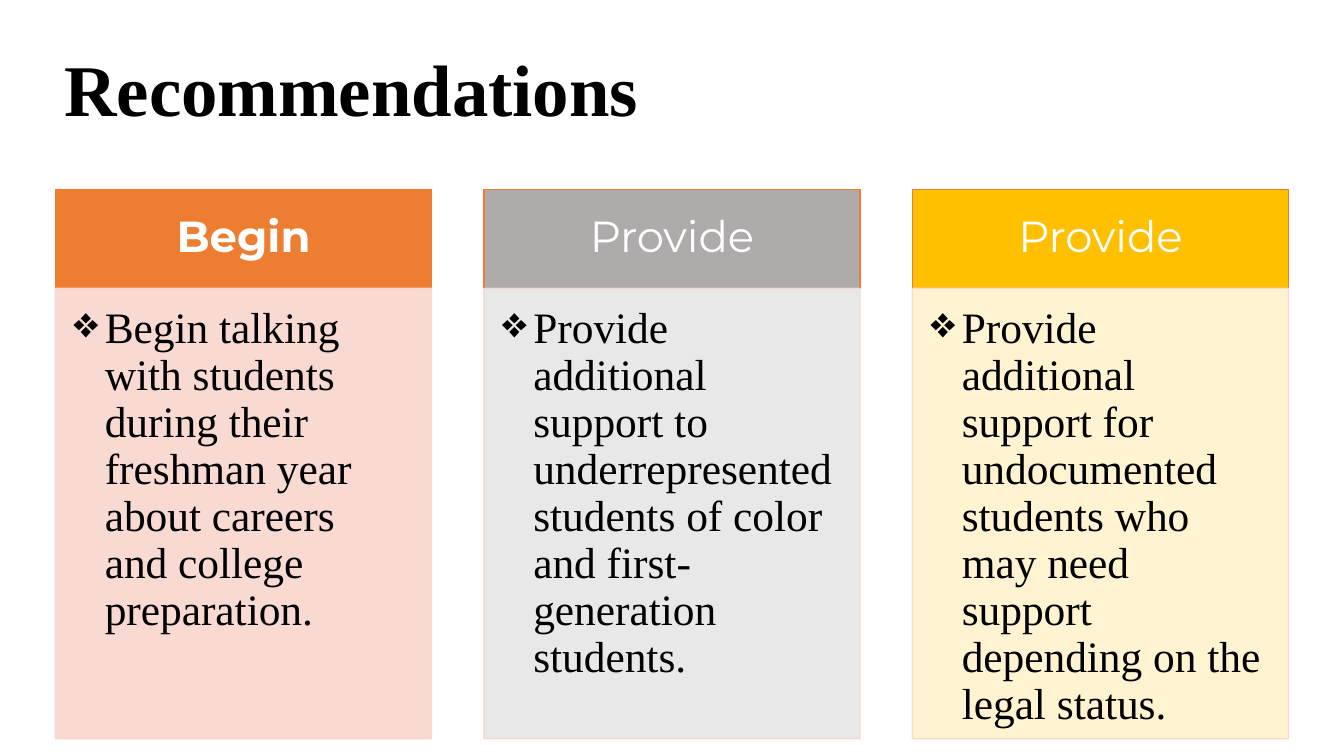
from lxml import etree
from pptx import Presentation
from pptx.dml.color import RGBColor
from pptx.enum.shapes import MSO_SHAPE as Shape
from pptx.enum.text import MSO_ANCHOR as Anchor, PP_ALIGN as Align
from pptx.oxml.ns import qn
from pptx.util import Emu, Pt

COLORS = {
    "black": "000000", "white": "FFFFFF",
    "orange": "ED7D31", "gray": "AFABAB", "gold": "FFC000",
    "pale orange": "F8D7CE", "pale gray": "E7E6E6", "pale gold": "FFF2CC",
}
SERIF, SANS = "Times New Roman", "Montserrat"
PX = 9144  # 100 px to the inch
LEFT, STEP, WIDTH = 55, 425, 373
HEAD_TOP, HEAD_HEIGHT, BODY_HEIGHT = 188, 98, 447
INDENT = 31
CARDS = [
    ("Begin", True, "orange", "pale orange",
     "Begin talking with students during their freshman year about careers "
     "and college preparation."),
    ("Provide", False, "gray", "pale gray",
     "Provide additional support to underrepresented students of color and "
     "first-generation students."),
    ("Provide", False, "gold", "pale gold",
     "Provide additional support for undocumented students who may need "
     "support depending on the legal status."),
]


class Page:
    def __init__(self, deck):
        self.slide = deck.slides.add_slide(deck.slide_layouts[6])

    def color(self, name):
        return RGBColor.from_string(COLORS[name])

    def set_text(self, box, text, size, font, color, bold=False,
                 anchor=Anchor.MIDDLE, align=Align.LEFT, insets=(10, 5, 10, 5)):
        frame = box.text_frame
        frame.word_wrap = True
        frame.vertical_anchor = anchor
        (frame.margin_left, frame.margin_top,
         frame.margin_right, frame.margin_bottom) = [Emu(n * PX) for n in insets]
        para = frame.paragraphs[0]
        para.alignment = align
        para.line_spacing = 0.9
        span = para.add_run()
        span.text = text
        span.font.name = font
        span.font.size = Pt(size)
        span.font.bold = bold
        span.font.color.rgb = self.color(color)
        return para

    def title(self, text, *place):
        box = self.slide.shapes.add_textbox(*[Emu(n * PX) for n in place])
        self.set_text(box, text, 52, SERIF, "black", bold=True)

    def panel(self, place, fill, line, opacity=100):
        box = self.slide.shapes.add_shape(
            Shape.RECTANGLE, *[Emu(n * PX) for n in place])
        box.shadow.inherit = False
        box.fill.solid()
        box.fill.fore_color.rgb = self.color(fill)
        box.line.color.rgb = self.color(line)
        box.line.width = Pt(1)
        if opacity < 100:
            for color in box.element.spPr.iter(qn("a:srgbClr")):
                etree.SubElement(color, qn("a:alpha"), val=str(opacity * 1000))
        return box

    def bullet(self, para):
        """Give the paragraph a diamond bullet with a hanging indent."""
        properties = para._p.get_or_add_pPr()
        properties.set("marL", str(INDENT * PX))
        properties.set("indent", str(-INDENT * PX))
        etree.SubElement(properties, qn("a:buChar"), char="❖")

    def card(self, left, heading, bold, head_fill, body_fill, advice):
        head = self.panel((left, HEAD_TOP, WIDTH, HEAD_HEIGHT),
                          head_fill, "orange")
        self.set_text(head, heading, 31, SANS, "white", bold,
                      align=Align.CENTER, insets=(24, 14, 24, 14))
        body = self.panel((left, HEAD_TOP + HEAD_HEIGHT, WIDTH, BODY_HEIGHT),
                          body_fill, "pale orange", opacity=90)
        para = self.set_text(body, advice, 31, SERIF, "black",
                             anchor=Anchor.TOP, insets=(18, 18, 24, 27))
        self.bullet(para)


def main():
    deck = Presentation()
    deck.slide_width, deck.slide_height = Emu(1333 * PX), Emu(750 * PX)
    page = Page(deck)
    page.title("Recommendations", 54, 30, 1150, 124)
    for index, card in enumerate(CARDS):
        page.card(LEFT + index * STEP, *card)
    deck.save("out.pptx")


if __name__ == "__main__":
    main()
